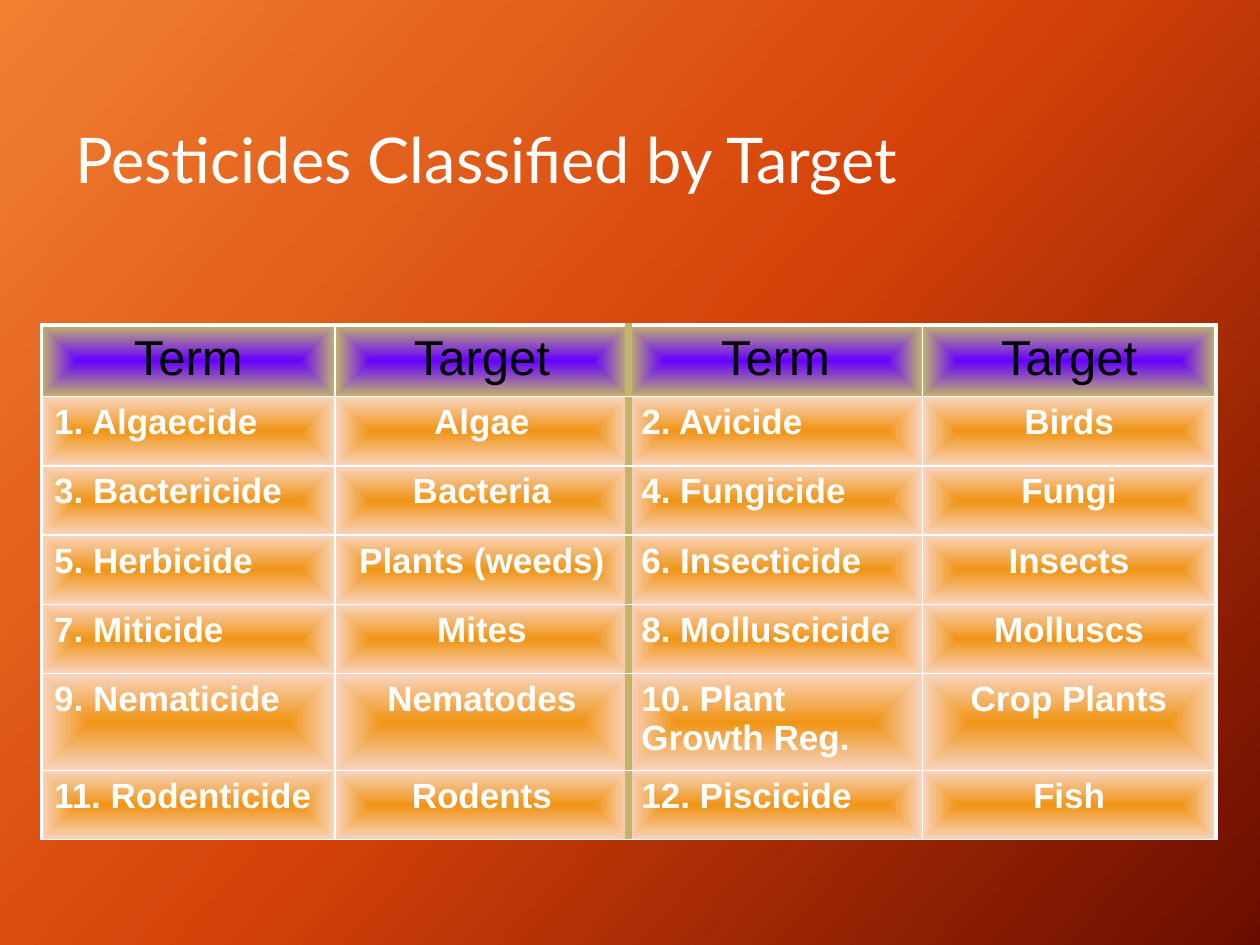
from lxml.etree import SubElement
from pptx import Presentation
from pptx.dml.color import RGBColor
from pptx.enum.text import MSO_ANCHOR, PP_ALIGN
from pptx.oxml.ns import qn
from pptx.util import Inches, Pt

COLORS = {
    "white": "FFFFFF", "black": "000000", "olive": "C1B56B", "violet": "6600FF",
    "amber": "F09415", "peach": "F8D5C1",
    "orange": "F18031", "rust": "D54209", "maroon": "6A0D00",
}

ROWS = [
    ("Term", "Target", "Term", "Target"),
    ("1. Algaecide", "Algae", "2. Avicide", "Birds"),
    ("3. Bactericide", "Bacteria", "4. Fungicide", "Fungi"),
    ("5. Herbicide", "Plants (weeds)", "6. Insecticide", "Insects"),
    ("7. Miticide", "Mites", "8. Molluscicide", "Molluscs"),
    ("9. Nematicide", "Nematodes", "10. Plant Growth Reg.", "Crop Plants"),
    ("11. Rodenticide", "Rodents", "12. Piscicide", "Fish"),
]


def add_gradient(parent, names):
    gradient = SubElement(parent, qn("a:gradFill"), rotWithShape="1")
    stops = SubElement(gradient, qn("a:gsLst"))
    for index, name in enumerate(names):
        stop = SubElement(stops, qn("a:gs"), pos=str(100000 * index // (len(names) - 1)))
        SubElement(stop, qn("a:srgbClr"), val=COLORS[name])
    return gradient


def format_text(paragraph, size, font, color, bold=False):
    for run in paragraph.runs:
        run.font.size = Pt(size)
        run.font.name = font
        run.font.bold = bold
        run.font.color.rgb = RGBColor.from_string(COLORS[color])


prs = Presentation()
prs.slide_width, prs.slide_height = Inches(10), Inches(7.5)
slide = prs.slides.add_slide(prs.slide_layouts[6])

slide.background.fill.solid()
background = slide.background._cSld.bg.bgPr
solid = background.find(qn("a:solidFill"))
backdrop = add_gradient(background, ["orange", "rust", "maroon"])
SubElement(backdrop, qn("a:lin"), ang=str(42 * 60000), scaled="0")
background.replace(solid, backdrop)

title = slide.shapes.add_textbox(Inches(0.5), Inches(0.67), Inches(9), Inches(1.25)).text_frame
title.word_wrap = True
title.vertical_anchor = MSO_ANCHOR.MIDDLE
title.text = "Pesticides Classified by Target"
title.paragraphs[0].line_spacing = 0.9
format_text(title.paragraphs[0], 36, "Lato", "white")

pesticides = slide.shapes.add_table(
    len(ROWS), 4, Inches(0.33), Inches(2.58), Inches(9.33), Inches(3.85)
).table
pesticides.first_row = False
pesticides.horz_banding = False
for column in pesticides.columns:
    column.width = Inches(2.33)
for row in pesticides.rows:
    row.height = Inches(0.55)

for r, labels in enumerate(ROWS):
    header = r == 0
    for c, label in enumerate(labels):
        cell = pesticides.cell(r, c)
        cell.text = label
        paragraph = cell.text_frame.paragraphs[0]
        centered = header or c % 2 == 1
        paragraph.alignment = PP_ALIGN.CENTER if centered else PP_ALIGN.LEFT
        format_text(paragraph, 28 if header else 20, "Arial",
                    "black" if header else "white", not header)

        borders = {
            "L": {0: ("white", 2.25), 2: ("olive", 4.5)}.get(c, ("white", 1)),
            "R": {1: ("olive", 4.5), 3: ("white", 2.25)}.get(c, ("white", 1)),
            "T": ("white", 2.25 if header else 1),
            "B": ("white", 1),
        }
        properties = cell._tc.get_or_add_tcPr()
        for side, (color, width) in borders.items():
            line = SubElement(properties, qn(f"a:ln{side}"), w=str(Pt(width)))
            SubElement(SubElement(line, qn("a:solidFill")), qn("a:srgbClr"), val=COLORS[color])
        fill = add_gradient(properties, ["violet", "olive"] if header else ["amber", "peach"])
        focus = SubElement(fill, qn("a:path"), path="shape")
        SubElement(focus, qn("a:fillToRect"), l="50000", t="50000", r="50000", b="50000")

prs.save("out.pptx")
